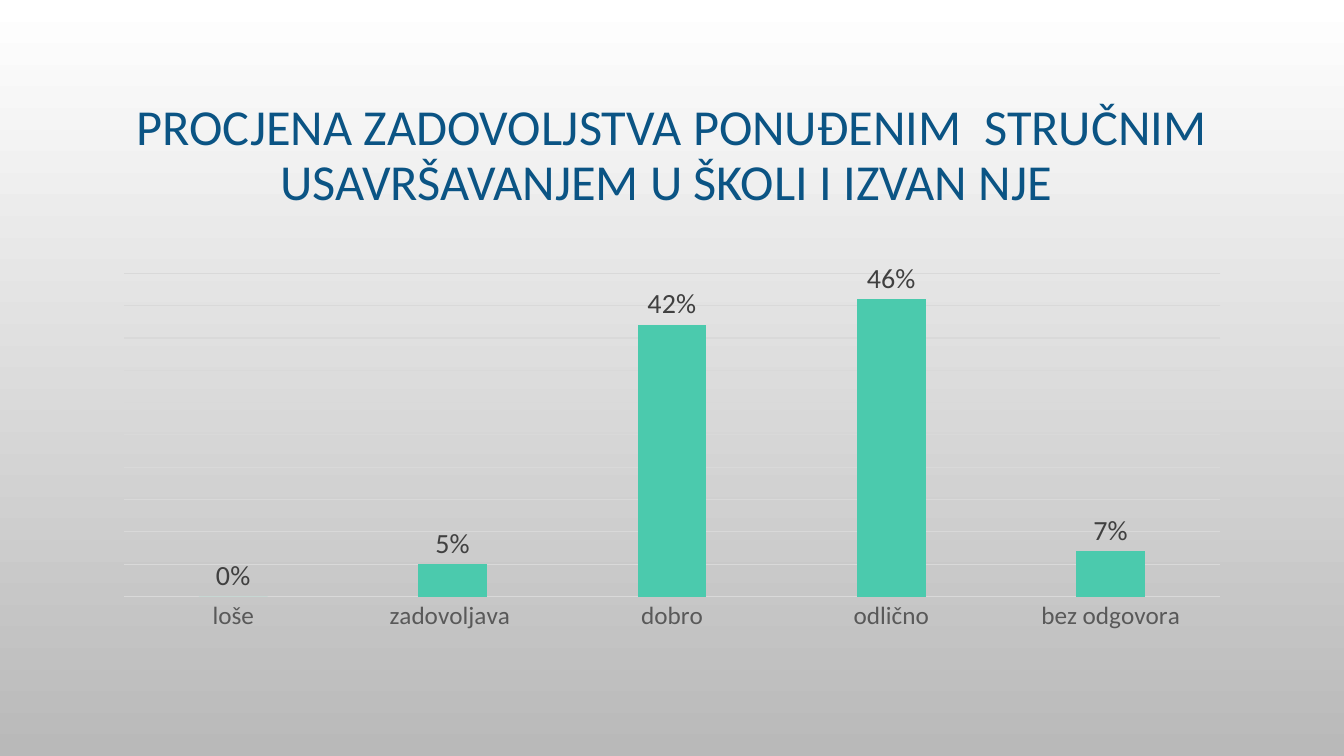
from pptx import Presentation
from pptx.chart.data import CategoryChartData
from pptx.dml.color import RGBColor
from pptx.enum.chart import XL_CHART_TYPE, XL_LABEL_POSITION, XL_TICK_MARK
from pptx.enum.text import MSO_ANCHOR, PP_ALIGN
from pptx.util import Pt

COLUMNS = XL_CHART_TYPE.COLUMN_CLUSTERED
OUTSIDE_END = XL_LABEL_POSITION.OUTSIDE_END
NO_TICKS = XL_TICK_MARK.NONE
MIDDLE = MSO_ANCHOR.MIDDLE
CENTER = PP_ALIGN.CENTER

TITLE_BOX = (72, 49, 816, 126)
CHART_BOX = (72, 186.5, 816, 269.3)
TITLE = "PROCJENA ZADOVOLJSTVA PONUĐENIM  STRUČNIM USAVRŠAVANJEM U ŠKOLI I IZVAN NJE "
RATINGS = {
    "loše": 0,
    "zadovoljava ": 0.05,
    "dobro": 0.42,
    "odlično": 0.46,
    "bez odgovora": 0.07,
}
BACKGROUND = ("FFFFFF", "B9B9B9")
GRID = "D9D9D9"


def color(value):
    """Return the colour for a hex string."""
    return RGBColor.from_string(value)


def set_attributes(target, **values):
    """Set each named attribute on the target."""
    for name, value in values.items():
        setattr(target, name, value)


def format_font(font, size, hex_color):
    """Apply the slide's typeface with a size and colour."""
    set_attributes(font, name="Calibri", size=Pt(size), bold=False)
    font.color.rgb = color(hex_color)


def format_line(line):
    """Apply the thin grey line used by the chart."""
    line.color.rgb = color(GRID)
    line.width = Pt(0.75)


def paint_background(slide):
    """Fill the slide with a vertical gradient."""
    fill = slide.background.fill
    fill.gradient()
    fill.gradient_angle = 270
    for position, (stop, value) in enumerate(zip(fill.gradient_stops, BACKGROUND)):
        stop.color.rgb = color(value)
        stop.position = position


def place_title(slide, box):
    """Place the title placeholder in the box."""
    title = slide.shapes.title
    left, top, width, height = map(Pt, box)
    set_attributes(title, left=left, top=top, width=width, height=height)
    set_attributes(title.text_frame, text=TITLE, vertical_anchor=MIDDLE, word_wrap=True)
    paragraph = title.text_frame.paragraphs[0]
    set_attributes(paragraph, alignment=CENTER, line_spacing=0.9)
    format_font(paragraph.runs[0].font, 36, "0B5484")


def add_ratings_chart(slide, box):
    """Add the column chart of ratings in the box."""
    data = CategoryChartData(number_format="0%")
    data.categories = RATINGS.keys()
    data.add_series("Series 1", RATINGS.values())
    chart = slide.shapes.add_chart(COLUMNS, *map(Pt, box), data).chart
    set_attributes(chart, has_legend=False, has_title=False)
    format_font(chart.font, 10, "000000")

    category_axis = chart.category_axis
    set_attributes(category_axis, major_tick_mark=NO_TICKS, minor_tick_mark=NO_TICKS)
    format_font(category_axis.tick_labels.font, 18, "595959")
    format_line(category_axis.format.line)

    value_axis = chart.value_axis
    set_attributes(value_axis, visible=False, has_major_gridlines=True,
                   minimum_scale=0, maximum_scale=0.5, major_unit=0.05)
    format_line(value_axis.major_gridlines.format.line)

    plot = chart.plots[0]
    set_attributes(plot, gap_width=219, overlap=-27, vary_by_categories=False)
    series = plot.series[0]
    series.format.fill.solid()
    series.format.fill.fore_color.rgb = color("4BCAAD")
    labels = series.data_labels
    set_attributes(labels, show_value=True, position=OUTSIDE_END,
                   number_format="0%", number_format_is_linked=False)
    format_font(labels.font, 20, "404040")


def main():
    """Build and save the presentation."""
    presentation = Presentation()
    set_attributes(presentation, slide_width=Pt(960), slide_height=Pt(540))
    slide = presentation.slides.add_slide(presentation.slide_layouts.get_by_name("Title Only"))
    paint_background(slide)
    place_title(slide, TITLE_BOX)
    add_ratings_chart(slide, CHART_BOX)
    presentation.save("out.pptx")


if __name__ == "__main__":
    main()
